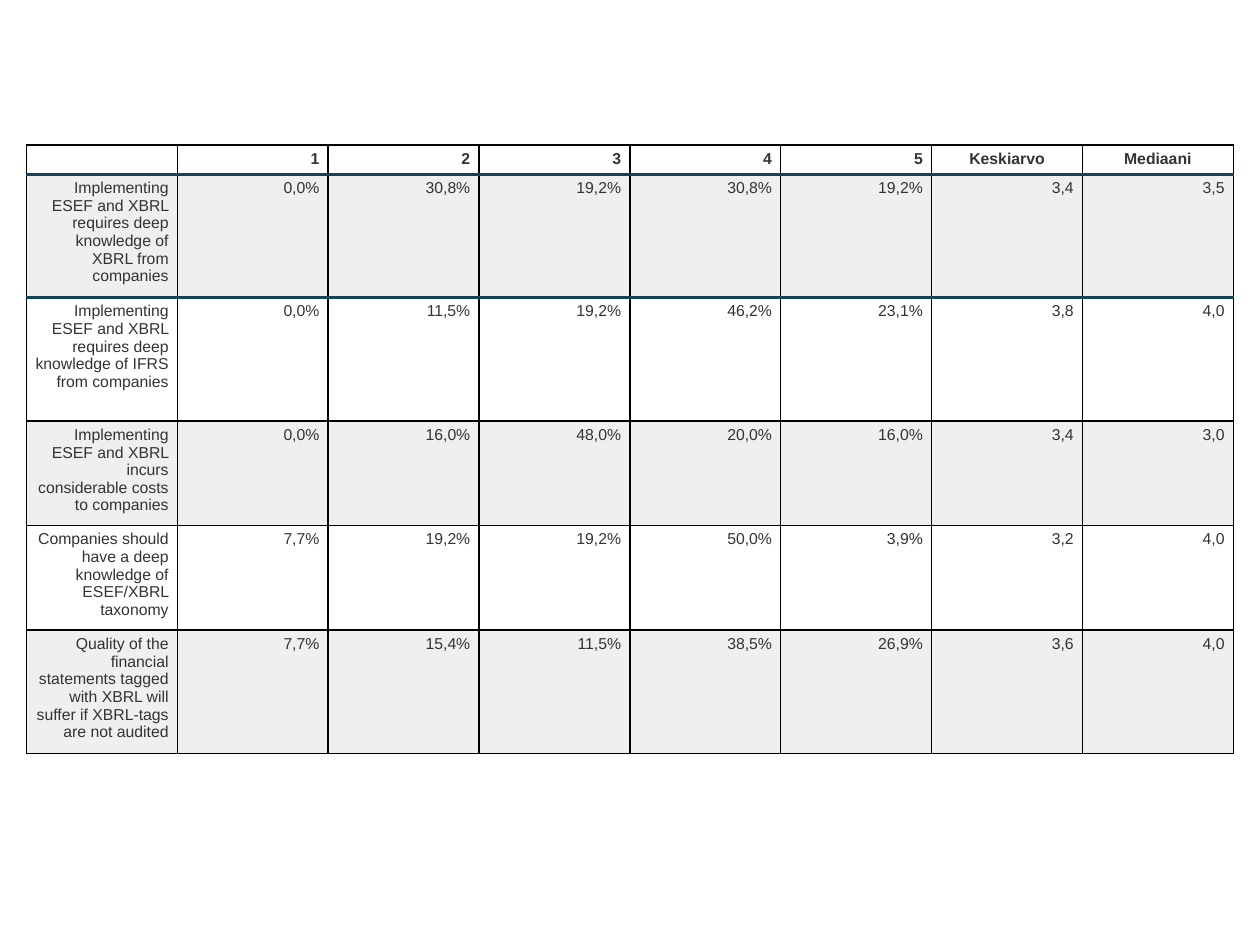
"""Build a slide with a table of survey answers about ESEF and XBRL."""
import pptx
import pptx.dml.color
import pptx.enum.text
import pptx.oxml.ns
import pptx.util
from lxml import etree

Inches = pptx.util.Inches
Pt = pptx.util.Pt
ALIGN = pptx.enum.text.PP_ALIGN

HEADER = ["", "1", "2", "3", "4", "5", "Keskiarvo", "Mediaani"]
ANSWERS = [
    ["Implementing ESEF and XBRL requires deep knowledge of XBRL from companies",
     "0,0%", "30,8%", "19,2%", "30,8%", "19,2%", "3,4", "3,5"],
    ["Implementing ESEF and XBRL requires deep knowledge of IFRS from companies",
     "0,0%", "11,5%", "19,2%", "46,2%", "23,1%", "3,8", "4,0"],
    ["Implementing ESEF and XBRL incurs considerable costs to companies",
     "0,0%", "16,0%", "48,0%", "20,0%", "16,0%", "3,4", "3,0"],
    ["Companies should have a deep knowledge of ESEF/XBRL taxonomy",
     "7,7%", "19,2%", "19,2%", "50,0%", "3,9%", "3,2", "4,0"],
    ["Quality of the financial statements tagged with XBRL will suffer if XBRL-tags are not audited",
     "7,7%", "15,4%", "11,5%", "38,5%", "26,9%", "3,6", "4,0"],
]
ROWS = [HEADER] + ANSWERS
ROW_HEIGHTS = [0.22, 0.98, 0.98, 0.83, 0.83, 0.98]
LEFT, TOP, WIDTH = 0.21, 1.15, 9.58
FONT_SIZE = 9
TEXT, WHITE, STRIPE = "333333", "FFFFFF", "EFEFEF"
THIN, ACCENT = ("000000", 1), ("124456", 2)
ROW_RULES = [THIN, ACCENT, ACCENT, THIN, THIN, THIN, THIN]


def color(value):
    return pptx.dml.color.RGBColor.from_string(value)


def add_element(parent, tag, **attributes):
    return etree.SubElement(parent, pptx.oxml.ns.qn(tag), attributes)


def set_borders(cell, above, below):
    properties = cell._tc.get_or_add_tcPr()
    sides = {"a:lnL": THIN, "a:lnR": THIN, "a:lnT": above, "a:lnB": below}
    for tag, (value, points) in sides.items():
        line = add_element(properties, tag, w=str(Pt(points)))
        add_element(add_element(line, "a:solidFill"), "a:srgbClr", val=value)


def fill_cell(cell, text, alignment, bold, background):
    cell.margin_left = cell.margin_right = Inches(0.07)
    cell.margin_top = cell.margin_bottom = Inches(0.04)
    cell.fill.solid()
    cell.fill.fore_color.rgb = color(background)
    paragraph = cell.text_frame.paragraphs[0]
    paragraph.alignment = alignment
    if not text:
        add_element(paragraph._p, "a:endParaRPr", sz=str(FONT_SIZE * 100))
        return
    run = paragraph.add_run()
    run.text = text
    run.font.name = "Arial"
    run.font.size = Pt(FONT_SIZE)
    run.font.bold = bold
    run.font.color.rgb = color(TEXT)


def main():
    presentation = pptx.Presentation()
    presentation.slide_width = Inches(10)
    presentation.slide_height = Inches(7.5)
    slide = presentation.slides.add_slide(presentation.slide_layouts[6])
    table = slide.shapes.add_table(
        len(ROWS), len(HEADER), Inches(LEFT), Inches(TOP),
        Inches(WIDTH), Inches(sum(ROW_HEIGHTS))).table
    for row, height in zip(table.rows, ROW_HEIGHTS):
        row.height = Inches(height)
    for row_index, row in enumerate(ROWS):
        is_header = row_index == 0
        background = STRIPE if row_index % 2 else WHITE
        for column_index, text in enumerate(row):
            cell = table.cell(row_index, column_index)
            centered = is_header and column_index >= 6
            set_borders(cell, ROW_RULES[row_index], ROW_RULES[row_index + 1])
            fill_cell(cell, text, ALIGN.CENTER if centered else ALIGN.RIGHT,
                      is_header, background)
    presentation.save("out.pptx")


if __name__ == "__main__":
    main()
